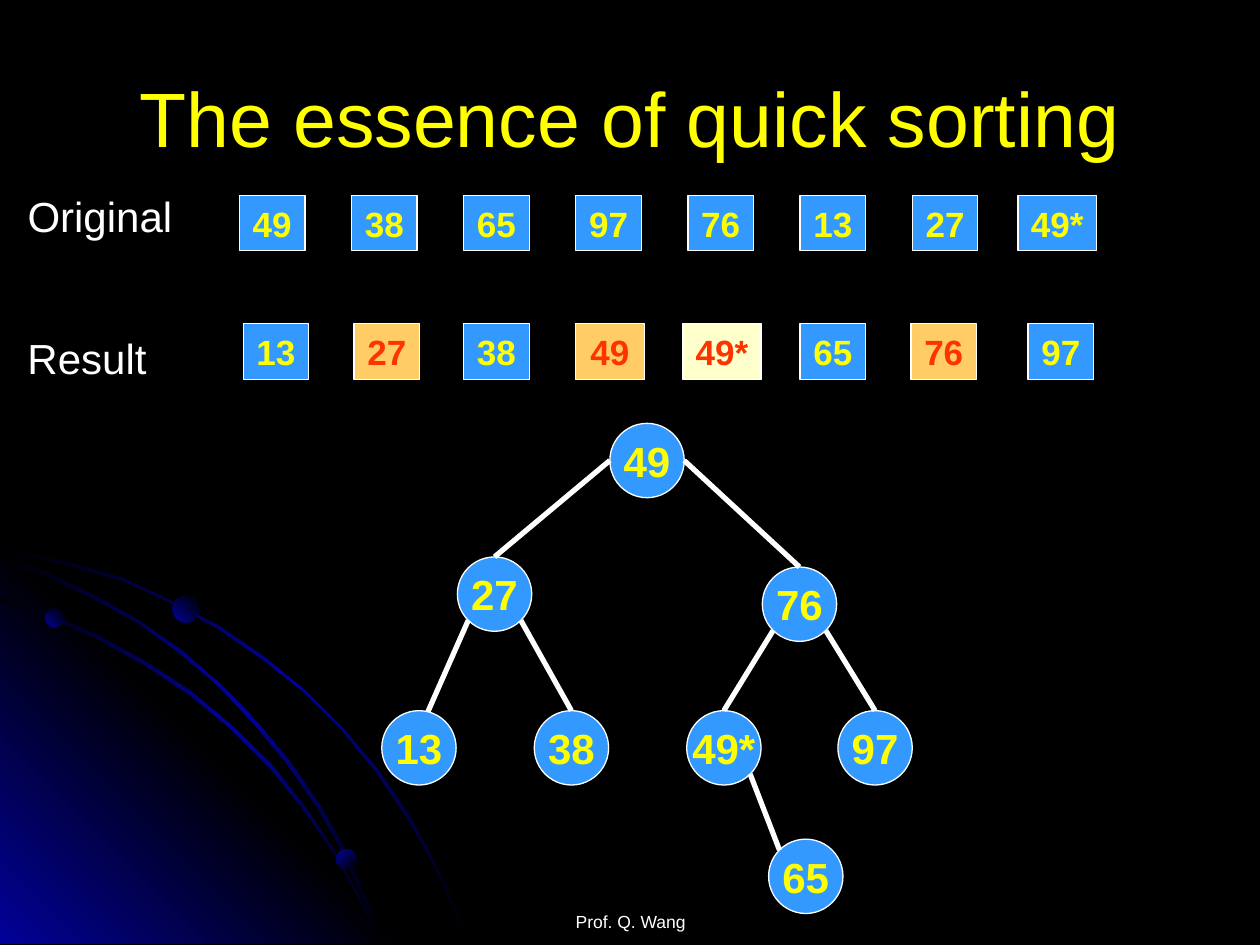
import math

import pptx
import pptx.util
from lxml import etree
from pptx.dml.color import RGBColor
from pptx.enum.shapes import MSO_CONNECTOR, MSO_SHAPE
from pptx.enum.text import MSO_ANCHOR, PP_ALIGN
from pptx.oxml.ns import qn
from pptx.util import Inches

BLACK = RGBColor(0x00, 0x00, 0x00)
WHITE = RGBColor(0xFF, 0xFF, 0xFF)
YELLOW = RGBColor(0xFF, 0xFF, 0x00)
RED = RGBColor(0xFF, 0x33, 0x00)
BLUE = RGBColor(0x33, 0x99, 0xFF)
ORANGE = RGBColor(0xFF, 0xCC, 0x66)
CREAM = RGBColor(0xFF, 0xFF, 0xCC)
NAVY = RGBColor(0x01, 0x01, 0x99)

FONT = "Arial"
TITLE = "The essence of quick sorting"
FOOTER = "Prof. Q. Wang"
LABELS = [("Original", 1.46, 1.38), ("Result", 2.59, 1.2)]

ORIGINAL = ["49", "38", "65", "97", "76", "13", "27", "49*"]
ORIGINAL_TOP, ORIGINAL_CENTER, ORIGINAL_STEP = 1.55, 2.16, 0.89
RESULT_TOP = 2.57
RESULT = [
    ("13", 2.19, 0.52, BLUE), ("27", 3.07, 0.52, ORANGE),
    ("38", 3.94, 0.52, BLUE), ("49", 4.84, 0.55, ORANGE),
    ("49*", 5.73, 0.62, CREAM), ("65", 6.61, 0.52, BLUE),
    ("76", 7.49, 0.52, ORANGE), ("97", 8.42, 0.52, BLUE),
]
CELL_WIDTH, STAR_WIDTH, CELL_HEIGHT = 0.52, 0.62, 0.44

NODE_SIZE = 0.59
NODES = {
    "49": (4.84, 3.36), "27": (3.63, 4.42), "76": (6.05, 4.5),
    "97": (6.65, 5.64), "49*": (5.45, 5.64), "38": (4.24, 5.64),
    "13": (3.03, 5.64), "65": (6.1, 6.66),
}
LEFT, RIGHT, LOWER_LEFT, LOWER_RIGHT, UPPER_LEFT, TOP = 180, 0, 135, 45, 225, 270
EDGES = [
    ("49", LEFT, "27", TOP), ("49", RIGHT, "76", TOP),
    ("27", LOWER_LEFT, "13", 284), ("27", LOWER_RIGHT, "38", TOP),
    ("76", LOWER_LEFT, "49*", TOP), ("76", LOWER_RIGHT, "97", TOP),
    ("49*", LOWER_RIGHT, "65", UPPER_LEFT),
]

GLOW = [(0, NAVY), (50, BLACK), (100, NAVY)]
STREAK = [(0, BLACK), (50, NAVY), (100, BLACK)]
ORB = [(0, NAVY), (100, BLACK)]
OUTER_ARC = [
    (0.57, 4.47), (0.28, 4.41), (0, 4.35), (0, 4.38), (0.28, 4.43), (0.56, 4.49),
    (0.97, 4.61), (1.35, 4.78), (1.73, 4.99), (2.08, 5.23), (2.41, 5.49),
    (2.71, 5.79), (2.98, 6.12), (3.23, 6.49), (3.37, 6.73), (3.5, 6.98),
    (3.6, 7.23), (3.7, 7.49), (3.72, 7.49), (3.62, 7.23), (3.52, 6.98),
    (3.39, 6.73), (3.25, 6.48), (3, 6.11), (2.72, 5.78), (2.42, 5.48),
    (2.09, 5.21), (1.74, 4.97), (1.36, 4.77), (0.98, 4.59),
]
INNER_ARC = [
    (2.85, 7.14), (2.94, 7.32), (3.01, 7.49), (3.03, 7.49), (2.96, 7.3),
    (2.86, 7.12), (2.66, 6.76), (2.42, 6.4), (2.15, 6.06), (1.84, 5.76),
    (1.52, 5.49), (1.17, 5.26), (0.79, 5.05), (0.41, 4.88), (0, 4.75), (0, 4.77),
    (0.39, 4.9), (0.77, 5.07), (1.15, 5.28), (1.5, 5.51), (1.83, 5.78),
    (2.13, 6.08), (2.4, 6.41), (2.65, 6.77),
]
MIDDLE_ARC = [
    (0, 4.42), (0, 4.44), (0.36, 4.57), (0.74, 4.75), (1.09, 4.94), (1.42, 5.18),
    (1.73, 5.44), (2.02, 5.75), (2.27, 6.05), (2.52, 6.41), (2.67, 6.67),
    (2.8, 6.94), (2.92, 7.22), (3.01, 7.49), (3.03, 7.49), (2.94, 7.2),
    (2.82, 6.93), (2.69, 6.65), (2.54, 6.39), (2.29, 6.03), (2.04, 5.73),
    (1.75, 5.43), (1.44, 5.16), (1.11, 4.93), (0.76, 4.73), (0.39, 4.55),
]
CORNER = [(3.22, 7.49), (0, 7.49), (0, 4.27)]
OUTLINES = [(OUTER_ARC, STREAK, 45), (CORNER, GLOW, 315),
            (INNER_ARC, STREAK, 45), (MIDDLE_ARC, STREAK, 45)]
ORBS = [(0.36, 4.83, 0.15, 315), (2.67, 6.74, 0.16, 45), (1.37, 4.73, 0.21, 315)]


def set_text(box, text, size, color=WHITE, bold=False, align=PP_ALIGN.CENTER,
             anchor=MSO_ANCHOR.MIDDLE, wrap=False, side=0.1, bottom=0.05):
    frame = box.text_frame
    frame.word_wrap = wrap
    frame.vertical_anchor = anchor
    frame.margin_left = frame.margin_right = Inches(side)
    frame.margin_top, frame.margin_bottom = Inches(0.05), Inches(bottom)
    para = frame.paragraphs[0]
    para.alignment = align
    span = para.add_run()
    span.text = text
    span.font.name = FONT
    span.font.size = pptx.util.Pt(size)
    span.font.bold = bold
    span.font.color.rgb = color


def add_text(page, text, left, top, width, height, **style):
    box = page.shapes.add_textbox(*map(Inches, (left, top, width, height)))
    set_text(box, text, **style)


def add_badge(page, kind, text, left, top, width, height, fill, **style):
    badge = page.shapes.add_shape(kind, *map(Inches, (left, top, width, height)))
    badge.shadow.inherit = False
    badge.fill.solid()
    badge.fill.fore_color.rgb = fill
    badge.line.color.rgb = WHITE
    badge.line.width = pptx.util.Pt(0.75)
    set_text(badge, text, bold=True, **style)
    return badge


def add_cell(page, text, center, top, width, fill):
    add_badge(page, MSO_SHAPE.RECTANGLE, text, center - width / 2, top, width,
              CELL_HEIGHT, fill, size=20, color=YELLOW if fill == BLUE else RED)


def paint_gradient(shape, stops, angle):
    shape.shadow.inherit = False
    shape.line.fill.background()
    shape.fill.gradient()
    gradient = shape.element.spPr.find(qn("a:gradFill"))
    stop_list = gradient.find(qn("a:gsLst"))
    for stop in list(stop_list):
        stop_list.remove(stop)
    for position, color in stops:
        stop = etree.SubElement(stop_list, qn("a:gs"), pos=str(position * 1000))
        etree.SubElement(stop, qn("a:srgbClr"), val=str(color))
    gradient.find(qn("a:lin")).set("ang", str(angle * 60000))


def add_backdrop(page):
    for points, stops, angle in OUTLINES:
        corners = [(Inches(x), Inches(y)) for x, y in points]
        builder = page.shapes.build_freeform(*corners[0], scale=1.0)
        builder.add_line_segments(corners[1:], close=True)
        paint_gradient(builder.convert_to_shape(), stops, angle)
    for left, top, size, angle in ORBS:
        orb = page.shapes.add_shape(
            MSO_SHAPE.OVAL, *map(Inches, (left, top, size, size)))
        paint_gradient(orb, ORB, angle)


def rim_point(name, angle):
    left, top = NODES[name]
    radius = NODE_SIZE / 2
    turn = math.radians(angle)
    return (Inches(left + radius + radius * math.cos(turn)),
            Inches(top + radius + radius * math.sin(turn)))


def add_tree(page):
    circles = {
        name: add_badge(page, MSO_SHAPE.OVAL, name, left, top, NODE_SIZE, NODE_SIZE,
                        BLUE, size=24, color=YELLOW, side=0)
        for name, (left, top) in NODES.items()
    }
    for parent, start, child, end in EDGES:
        edge = page.shapes.add_connector(
            MSO_CONNECTOR.STRAIGHT, *rim_point(parent, start), *rim_point(child, end))
        if end == TOP:
            edge.end_connect(circles[child], 0)
        edge.line.color.rgb = WHITE
        edge.line.width = pptx.util.Pt(3)
        etree.SubElement(edge.element.spPr, qn("a:effectLst"))


def main():
    deck = pptx.Presentation()
    deck.slide_width, deck.slide_height = Inches(10), Inches(7.5)
    page = deck.slides.add_slide(deck.slide_layouts[6])
    page.background.fill.solid()
    page.background.fill.fore_color.rgb = BLACK
    add_backdrop(page)
    add_text(page, FOOTER, 3.42, 6.9, 3.17, 0.5, size=10, wrap=True,
             anchor=MSO_ANCHOR.BOTTOM, bottom=0)
    add_text(page, TITLE, 0.5, 0.3, 9, 1.25, size=44, color=YELLOW, wrap=True)
    for text, top, width in LABELS:
        add_text(page, text, 0.12, top, width, 0.5, size=24, wrap=True,
                 align=PP_ALIGN.LEFT, anchor=MSO_ANCHOR.TOP)
    for index, text in enumerate(ORIGINAL):
        width = STAR_WIDTH if text.endswith("*") else CELL_WIDTH
        add_cell(page, text, ORIGINAL_CENTER + index * ORIGINAL_STEP,
                 ORIGINAL_TOP, width, BLUE)
    for text, center, width, fill in RESULT:
        add_cell(page, text, center, RESULT_TOP, width, fill)
    add_tree(page)
    deck.save("out.pptx")


if __name__ == "__main__":
    main()
